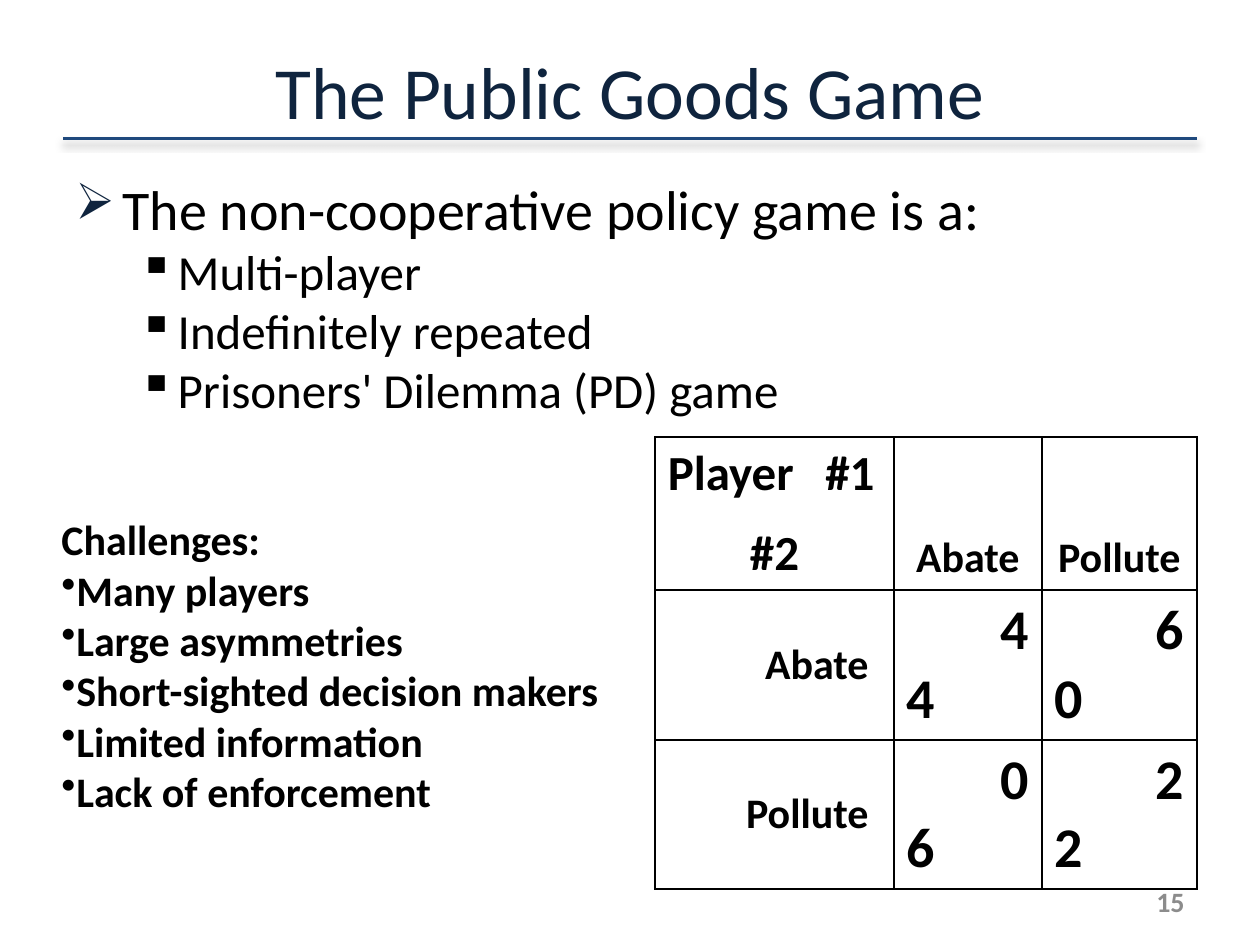
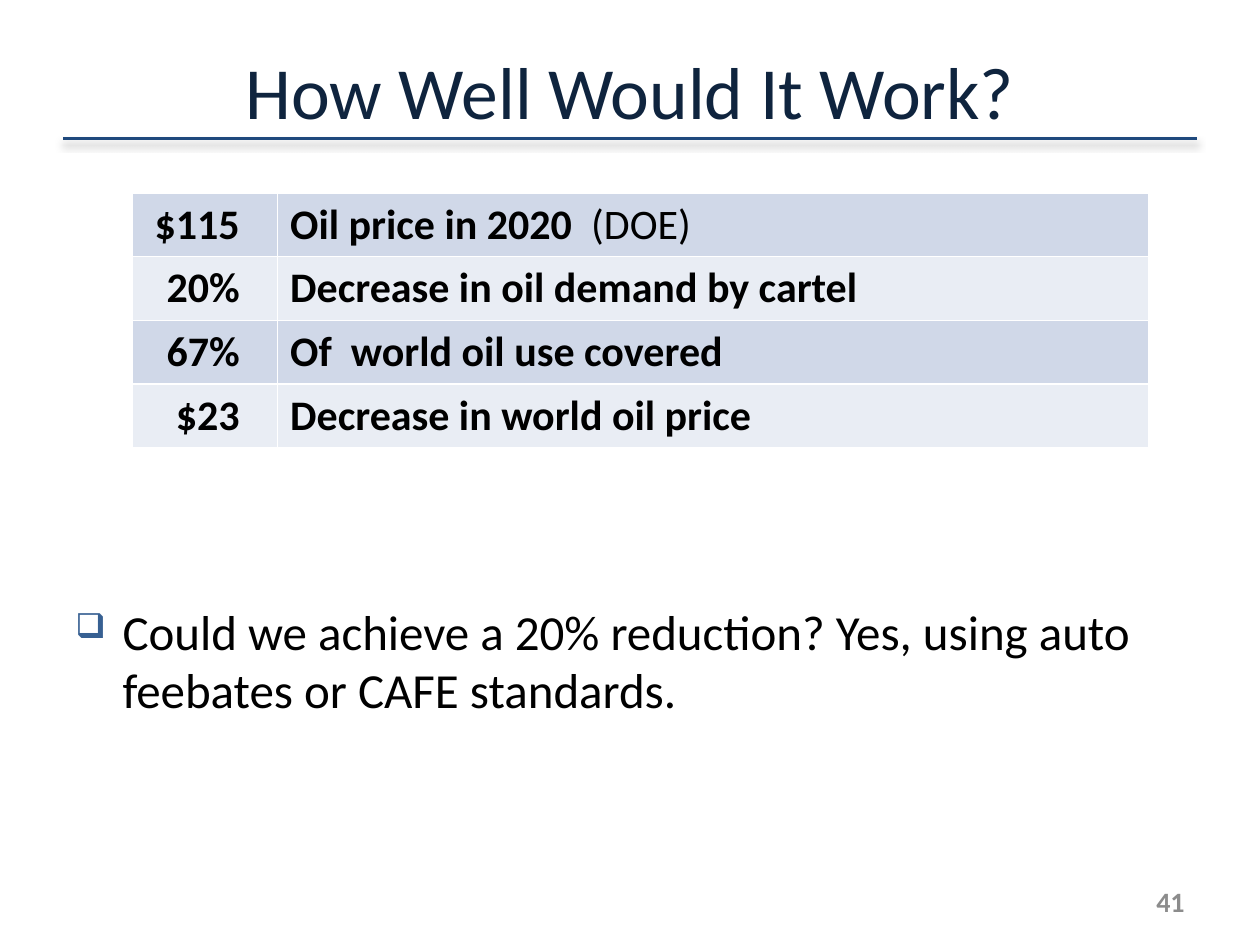
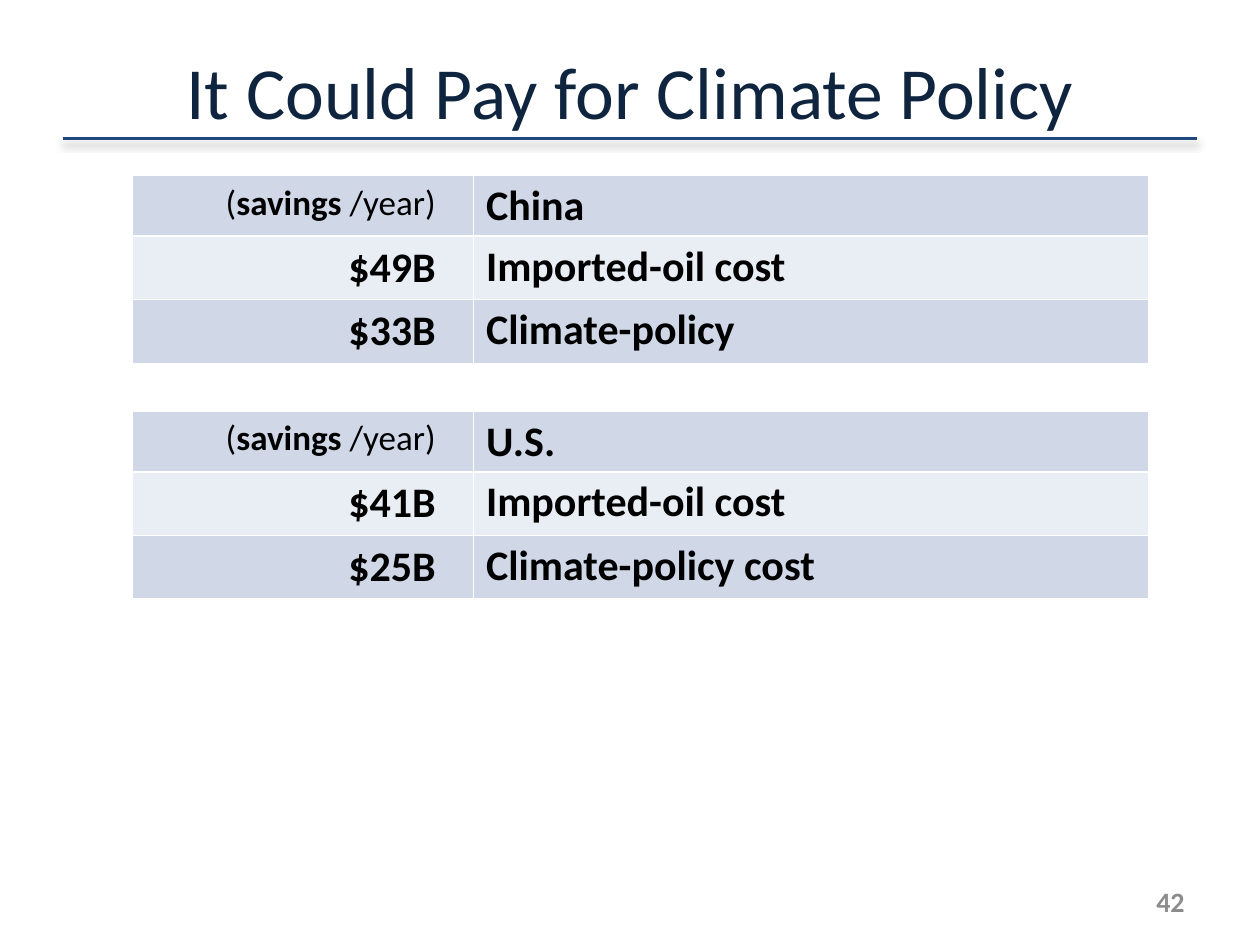
import pptx
import pptx.dml.color
import pptx.enum.shapes
import pptx.enum.text
import pptx.oxml
import pptx.oxml.ns
import pptx.util

Pt = pptx.util.Pt
ALIGN = pptx.enum.text.PP_ALIGN
ANCHOR = pptx.enum.text.MSO_ANCHOR

FONT = "Calibri"
BLACK, WHITE, GRAY = "000000", "FFFFFF", "8C8C8C"
NAVY, RULE_BLUE, BULLET_BLUE = "0F243E", "1F497D", "376092"
BANDS = ("D0D8E8", "E9EDF4")
MARGIN, CONTENT_WIDTH = 36, 648
TABLE_LEFT, TABLE_WIDTH = 75.6, 581


def rgb(value):
    """Turn a hex string into a colour."""
    return pptx.dml.color.RGBColor.from_string(value)


def add_xml(parent, xml):
    """Append a DrawingML fragment to an element."""
    ns = pptx.oxml.ns.nsdecls("a")
    parent.append(pptx.oxml.parse_xml(xml.replace(">", f" {ns}>", 1)))


def write(tf, text, size=24, bold=False, color=BLACK, align=ALIGN.LEFT,
          before=0, line_spacing=None):
    """Write one paragraph; text is a string or a list of (text, bold) pairs."""
    p = tf.paragraphs[0] if not tf.text else tf.add_paragraph()
    p.alignment = align
    p.space_before = Pt(before)
    if line_spacing:
        p.line_spacing = line_spacing
    for part, is_bold in [(text, bold)] if isinstance(text, str) else text:
        r = p.add_run()
        r.text = part
        r.font.name, r.font.size, r.font.bold = FONT, Pt(size), is_bold
        r.font.color.rgb = rgb(color)
    return p


def set_bullet(p, char, left=0, hanging=0, color=BLACK, percent=100):
    """Give a paragraph a bullet and a hanging indent."""
    pPr = p._p.get_or_add_pPr()
    pPr.set("marL", str(Pt(left)))
    pPr.set("indent", str(-Pt(hanging)))
    add_xml(pPr, f'<a:buClr><a:srgbClr val="{color}"/></a:buClr>')
    add_xml(pPr, f'<a:buSzPct val="{percent * 1000}"></a:buSzPct>')
    add_xml(pPr, f'<a:buChar char="{char}"></a:buChar>')


def add_box(slide, left, top, width, height, anchor=ANCHOR.TOP):
    """Add a wrapping text box and return its text frame."""
    sp = slide.shapes.add_textbox(Pt(left), Pt(top), Pt(width), Pt(height))
    tf = sp.text_frame
    tf.word_wrap = True
    tf.vertical_anchor = anchor
    return tf


def add_rule(slide, y):
    """Draw the shadowed line under the title."""
    line = slide.shapes.add_connector(
        pptx.enum.shapes.MSO_CONNECTOR.STRAIGHT,
        Pt(MARGIN), Pt(y), Pt(MARGIN + CONTENT_WIDTH), Pt(y))
    line.line.color.rgb = rgb(RULE_BLUE)
    line.line.width = Pt(1.5)
    add_xml(line._element.spPr, (
        f'<a:effectLst><a:outerShdw blurRad="{Pt(4)}" dist="{Pt(3)}" dir="5400000" '
        f'rotWithShape="0"><a:srgbClr val="{BLACK}"><a:alpha val="40000"/></a:srgbClr>'
        '</a:outerShdw></a:effectLst>'))


def new_slide(prs, title, number):
    """Add a slide with the shared title, rule and page number."""
    slide = prs.slides.add_slide(prs.slide_layouts[6])
    add_rule(slide, 79.2)
    tf = add_box(slide, MARGIN, 21.6, CONTENT_WIDTH, 74, ANCHOR.MIDDLE)
    tf.margin_top, tf.margin_bottom = 0, Pt(14.4)
    write(tf, title, size=42, color=NAVY, align=ALIGN.CENTER)
    tf = add_box(slide, 516, 500.4, 168, 29, ANCHOR.MIDDLE)
    write(tf, str(number), size=16, bold=True, color=GRAY, align=ALIGN.RIGHT)
    return slide


def style_cell(cell, border, fill=None, anchor=ANCHOR.TOP, right=7.2):
    """Set the borders, fill, anchor and right margin of a cell."""
    for side in ("lnL", "lnR", "lnT", "lnB"):
        add_xml(cell._tc.get_or_add_tcPr(), (
            f'<a:{side} w="{Pt(1)}"><a:solidFill><a:srgbClr val="{border}"/>'
            f'</a:solidFill></a:{side}>'))
    if fill:
        cell.fill.solid()
        cell.fill.fore_color.rgb = rgb(fill)
    else:
        cell.fill.background()
    cell.vertical_anchor = anchor
    cell.margin_right = Pt(right)


def add_table(slide, left, top, widths, heights):
    """Add an unbanded table with the given column widths and row heights."""
    table = slide.shapes.add_table(
        len(heights), len(widths), Pt(left), Pt(top),
        Pt(sum(widths)), Pt(sum(heights))).table
    table.first_row = table.horz_banding = False
    for column, width in zip(table.columns, widths):
        column.width = Pt(width)
    for row, height in zip(table.rows, heights):
        row.height = Pt(height)
    return table


def add_payoff_table(slide, left, top, moves, payoffs):
    """Add the two-player payoff matrix."""
    table = add_table(slide, left, top, (136.4, 84.6, 88.6), (87.4, 85.6, 85.4))
    corner = table.cell(0, 0)
    style_cell(corner, BLACK)
    p = write(corner.text_frame, "Player\t#1", size=28, bold=True)
    add_xml(p._p.get_or_add_pPr(),
            f'<a:tabLst><a:tab pos="{Pt(90)}" algn="l"/></a:tabLst>')
    write(corner.text_frame, "#2", size=28, bold=True, align=ALIGN.CENTER, before=12)
    for i, move in enumerate(moves, 1):
        head, side = table.cell(0, i), table.cell(i, 0)
        style_cell(head, BLACK, anchor=ANCHOR.BOTTOM)
        write(head.text_frame, move, bold=True, align=ALIGN.CENTER)
        style_cell(side, BLACK, anchor=ANCHOR.MIDDLE, right=14.4)
        write(side.text_frame, move, bold=True, align=ALIGN.RIGHT)
        for j, (first, second) in enumerate(payoffs[i - 1], 1):
            cell = table.cell(i, j)
            style_cell(cell, BLACK)
            write(cell.text_frame, first, size=32, bold=True, align=ALIGN.RIGHT)
            write(cell.text_frame, second, size=32, bold=True)


def add_figures_table(slide, top, value_width, heights, rows, line_spacing=None):
    """Add a banded table of right-aligned values and their labels."""
    widths = (value_width, TABLE_WIDTH - value_width)
    table = add_table(slide, TABLE_LEFT, top, widths, heights)
    for i, (value, label) in enumerate(rows):
        fill = BANDS[i % 2]
        cell = table.cell(i, 0)
        style_cell(cell, WHITE, fill, right=21.6)
        write(cell.text_frame, value, size=24 if isinstance(value, str) else 20,
              bold=True, align=ALIGN.RIGHT)
        cell = table.cell(i, 1)
        style_cell(cell, WHITE, fill)
        write(cell.text_frame, label, bold=True, line_spacing=line_spacing)


def build_game(prs):
    """Build the slide on the public goods game."""
    slide = new_slide(prs, "The Public Goods Game", 15)
    tf = add_box(slide, MARGIN, 96, CONTENT_WIDTH, 154)
    p = write(tf, "The non-cooperative policy game is a:", size=32)
    set_bullet(p, "➢", 27, 27, NAVY, 90)
    for trait in ("Multi-player", "Indefinitely repeated", "Prisoners' Dilemma (PD) game"):
        set_bullet(write(tf, trait, size=28), "▪", 58.5, 22.5)
    add_payoff_table(slide, 374.4, 249.8, ("Abate", "Pollute"),
                     ((("4", "4"), ("6", "0")), (("0", "6"), ("2", "2"))))
    tf = add_box(slide, 28, 290, 342, 181)
    write(tf, "Challenges:", bold=True)
    for challenge in ("Many players", "Large asymmetries", "Short-sighted decision makers",
                      "Limited information", "Lack of enforcement"):
        set_bullet(write(tf, challenge, bold=True), "•")


def build_effect(prs):
    """Build the slide on the effect on the oil price."""
    slide = new_slide(prs, "How Well Would It Work?", 41)
    tf = add_box(slide, MARGIN, 340, CONTENT_WIDTH, 130)
    p = write(tf, "Could we achieve a 20% reduction? Yes, using auto feebates "
                  "or CAFE standards.", size=28)
    set_bullet(p, "❑", 27, 27, BULLET_BLUE, 70)
    add_figures_table(slide, 110.2, 83, [36.4] * 4, (
        ("$115", [("Oil price in 2020 ", True), (" (DOE)", False)]),
        ("20%", "Decrease in oil demand by cartel"),
        ("67%", "Of  world oil use covered"),
        ("$23", "Decrease in world oil price")))


def build_savings(prs):
    """Build the slide on the yearly savings of two countries."""
    slide = new_slide(prs, "It Could Pay for Climate Policy", 42)
    unit = [("(", False), ("savings", True), (" /year)", False)]
    for top, country, oil, policy, policy_label in (
            (100.2, "China", "$49B", "$33B", "Climate-policy"),
            (235, "U.S.", "$41B", "$25B", "Climate-policy cost")):
        add_figures_table(slide, top, 195, (34.4, 36.4, 36.4), (
            (unit, country), (oil, "Imported-oil cost"), (policy, policy_label)),
            line_spacing=0.95)


def main():
    """Build the presentation and save it."""
    prs = pptx.Presentation()
    prs.slide_width, prs.slide_height = Pt(720), Pt(540)
    build_game(prs)
    build_effect(prs)
    build_savings(prs)
    prs.save("out.pptx")


if __name__ == "__main__":
    main()
